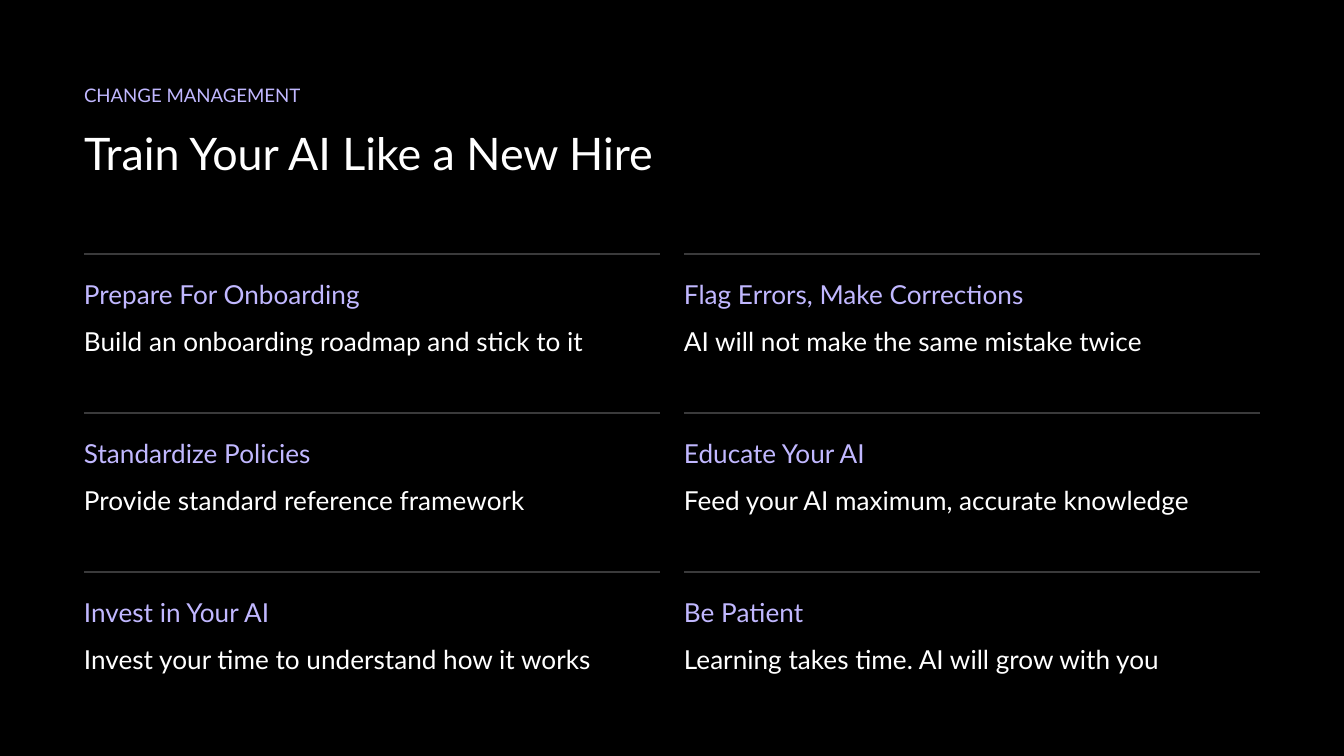
import pptx
import pptx.dml.color
import pptx.enum.shapes
import pptx.enum.text
import pptx.oxml.ns
import pptx.util
from lxml import etree

KICKER = "CHANGE MANAGEMENT"
TITLE = "Train Your AI Like a New Hire"
TIPS = [
    ("Prepare For Onboarding", "Build an onboarding roadmap and stick to it"),
    ("Flag Errors, Make Corrections", "AI will not make the same mistake twice"),
    ("Standardize Policies", "Provide standard reference framework"),
    ("Educate Your AI", "Feed your AI maximum, accurate knowledge"),
    ("Invest in Your AI", "Invest your time to understand how it works"),
    ("Be Patient", "Learning takes time. AI will grow with you"),
]
COLORS = {"background": "000000", "accent": "C1B8FF", "text": "FFFFFF", "rule": "3A3A3B"}
FONT = "Lato"
EMU_PER_PX = 914400 / 134.4
SLIDE_WIDTH, SLIDE_HEIGHT = 1344, 756
MARGIN = 84
COLUMNS = 2
COLUMN_WIDTH, COLUMN_PITCH = 576, 600
GRID_TOP, ROW_PITCH = 254, 159
TEXT_OFFSET, TEXT_HEIGHT = 20, 78


def px(length):
    return pptx.util.Emu(round(length * EMU_PER_PX))


def rgb(name):
    return pptx.dml.color.RGBColor.from_string(COLORS[name])


def add_text(slide, left, top, width, height, lines, size, spacing=1.0, gap=0):
    box = slide.shapes.add_textbox(px(left), px(top), px(width), px(height))
    frame = box.text_frame
    frame.word_wrap = True
    frame.auto_size = pptx.enum.text.MSO_AUTO_SIZE.SHAPE_TO_FIT_TEXT
    frame.margin_left = frame.margin_right = frame.margin_top = frame.margin_bottom = 0
    frame.text = "\n".join(text for text, color in lines)
    for paragraph, (text, color) in zip(frame.paragraphs, lines):
        paragraph.line_spacing = spacing
        paragraph.space_after = pptx.util.Pt(gap)
        font = paragraph.runs[0].font
        font.name = FONT
        font.size = pptx.util.Pt(size)
        font.color.rgb = rgb(color)


def add_rule(slide, left, top):
    rule = slide.shapes.add_connector(
        pptx.enum.shapes.MSO_CONNECTOR.STRAIGHT,
        px(left), px(top), px(left + COLUMN_WIDTH), px(top))
    rule.line.color.rgb = rgb("rule")
    rule.line.width = pptx.util.Pt(0.75)
    properties = rule.element.find(pptx.oxml.ns.qn("p:spPr"))
    etree.SubElement(properties, pptx.oxml.ns.qn("a:effectLst"))


def main():
    presentation = pptx.Presentation()
    presentation.slide_width = px(SLIDE_WIDTH)
    presentation.slide_height = px(SLIDE_HEIGHT)
    slide = presentation.slides.add_slide(presentation.slide_layouts[6])
    slide.background.fill.solid()
    slide.background.fill.fore_color.rgb = rgb("background")

    add_text(slide, MARGIN, 118, 862, 54, [(TITLE, "text")], 24, spacing=1.15)
    add_text(slide, MARGIN, 84, 571, 23, [(KICKER, "accent")], 10)
    for index, (heading, advice) in enumerate(TIPS):
        row, column = divmod(index, COLUMNS)
        left = MARGIN + column * COLUMN_PITCH
        top = GRID_TOP + row * ROW_PITCH
        add_rule(slide, left, top)
        add_text(slide, left, top + TEXT_OFFSET, COLUMN_WIDTH, TEXT_HEIGHT,
                 [(heading, "accent"), (advice, "text")], 14, spacing=1.15, gap=5.5)

    presentation.save("out.pptx")


if __name__ == "__main__":
    main()
